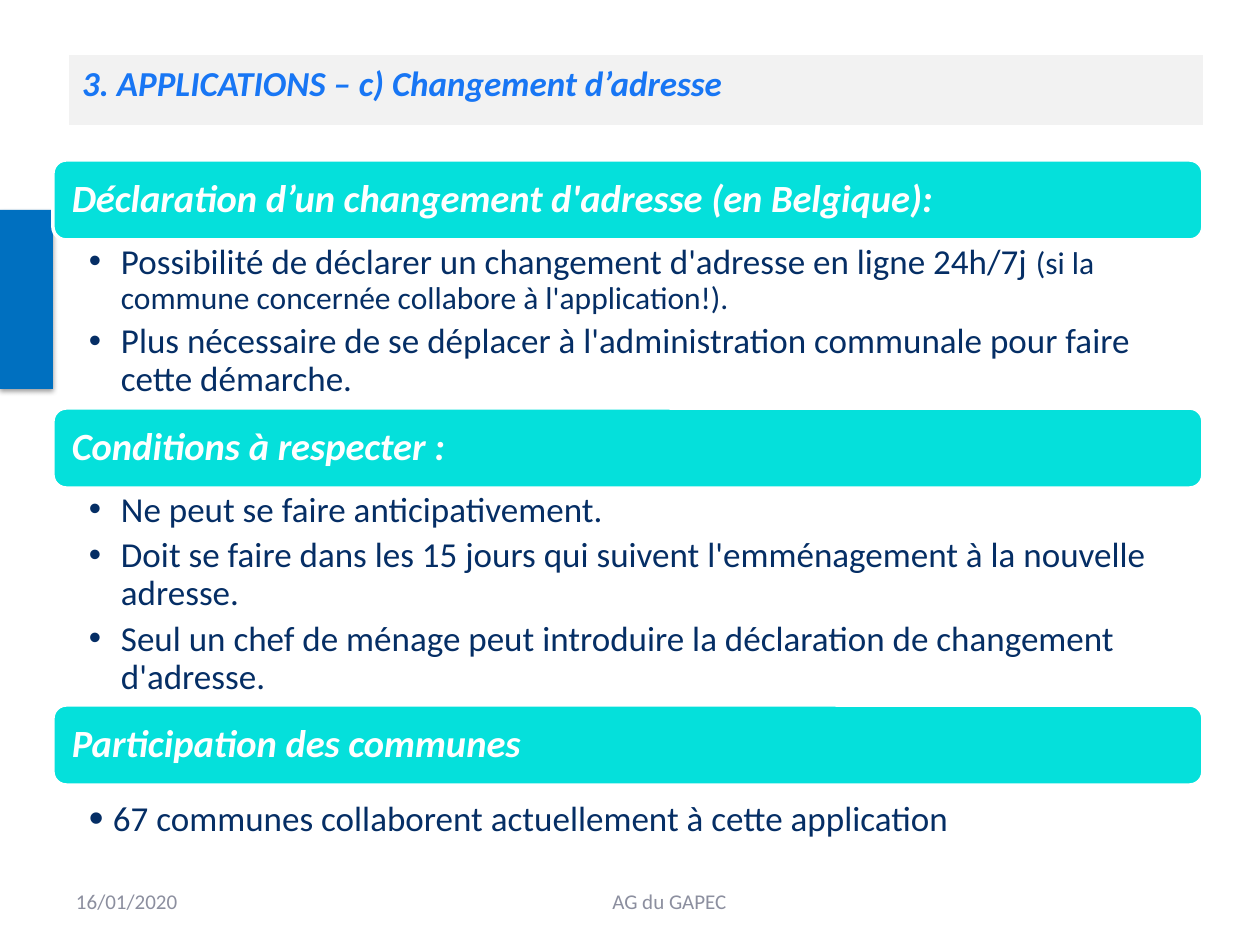
from lxml import etree
from pptx import Presentation
from pptx.dml.color import RGBColor
from pptx.enum.shapes import MSO_SHAPE
from pptx.enum.text import MSO_ANCHOR, MSO_AUTO_SIZE, PP_ALIGN
from pptx.oxml import parse_xml
from pptx.oxml.ns import nsdecls, qn
from pptx.util import Pt

PX = 914400 // 126
TOP, MIDDLE = MSO_ANCHOR.TOP, MSO_ANCHOR.MIDDLE
LEFT, CENTER = PP_ALIGN.LEFT, PP_ALIGN.CENTER
NO_AUTOFIT = MSO_AUTO_SIZE.NONE
RECTANGLE, ROUNDED = MSO_SHAPE.RECTANGLE, MSO_SHAPE.ROUNDED_RECTANGLE

FONT = "Calibri"
WHITE = RGBColor(0xFF, 0xFF, 0xFF)
TURQUOISE = RGBColor(0x05, 0xE0, 0xDB)
NAVY = RGBColor(0x05, 0x2E, 0x65)
BLUE = RGBColor(0x00, 0x70, 0xC0)
TITLE_BLUE = RGBColor(0x18, 0x76, 0xF4)
PALE_GREY = RGBColor(0xF2, 0xF2, 0xF2)
GREY = RGBColor(0x8C, 0x8F, 0x9F)

TITLE = "3. APPLICATIONS – c) Changement d’adresse"
# Each bullet is a list of (text, size) runs.
SECTIONS = [
    {
        "heading": "Déclaration d’un changement d'adresse (en Belgique):",
        "bullets": [
            [("Possibilité de déclarer un changement d'adresse en ligne 24h/7j ", 20),
             ("(si la commune concernée collabore à l'application!).", 18)],
            [("Plus nécessaire de se déplacer à l'administration communale "
              "pour faire cette démarche.", 20)],
        ],
        "height": 168, "indent": 32, "bullet_size": 100, "anchor": TOP,
    },
    {
        "heading": "Conditions à respecter :",
        "bullets": [
            [("Ne peut se faire anticipativement.", 20)],
            [("Doit se faire dans les 15 jours qui suivent l'emménagement "
              "à la nouvelle adresse.", 20)],
            [("Seul un chef de ménage peut introduire la déclaration "
              "de changement d'adresse.", 20)],
        ],
        "height": 217, "indent": 32, "bullet_size": 100, "anchor": TOP,
    },
    {
        "heading": "Participation des communes",
        "bullets": [[("67 communes collaborent actuellement à cette application", 20)]],
        "height": 71, "indent": 24, "bullet_size": 120, "anchor": MIDDLE,
    },
]
FOOTERS = [("16/01/2020", 63, 294, LEFT), ("AG du GAPEC", 372, 595, CENTER)]

SECTION_LEFT, SECTION_TOP, SECTION_WIDTH = 53, 160, 1150
HEADING_HEIGHT = 80


def px(*lengths):
    return [length * PX for length in lengths]


def set_frame(shape, margins, anchor):
    """Wrap the text of a shape; margins are left, top, right, bottom in px."""
    frame = shape.text_frame
    frame.word_wrap = True
    frame.auto_size = NO_AUTOFIT
    frame.vertical_anchor = anchor
    (frame.margin_left, frame.margin_top,
     frame.margin_right, frame.margin_bottom) = px(*margins)
    return frame


def style(para, size, color, emphasis=False, align=LEFT):
    para.alignment = align
    font = para.font
    font.name, font.size = FONT, Pt(size)
    font.bold = font.italic = emphasis
    font.color.rgb = color


def add_filled(slide, kind, box, color):
    shape = slide.shapes.add_shape(kind, *px(*box))
    shape.shadow.inherit = False
    shape.fill.solid()
    shape.fill.fore_color.rgb = color
    shape.line.fill.background()
    return shape


def add_side_bar(slide):
    bar = add_filled(slide, RECTANGLE, (0, 210, 53, 179), BLUE)
    effects = bar._element.spPr.find(qn("a:effectLst"))
    effects.append(parse_xml(
        f'<a:outerShdw {nsdecls("a")} blurRad="{Pt(3.1)}" dist="{Pt(1.6)}" '
        'dir="5400000" rotWithShape="0"><a:srgbClr val="000000">'
        '<a:alpha val="38000"/></a:srgbClr></a:outerShdw>'))


def add_bullet(para, indent, size_percent):
    properties = para._p.get_or_add_pPr()
    properties.set("marL", str(indent * PX))
    properties.set("indent", str(-indent * PX))
    marks = [("a:buSzPct", "val", str(size_percent * 1000)),
             ("a:buFont", "typeface", "Arial"),
             ("a:buChar", "char", "•")]
    # Bullet marks stand before the default run properties.
    defaults = properties.find(qn("a:defRPr"))
    for tag, name, value in marks:
        mark = etree.Element(qn(tag))
        mark.set(name, value)
        defaults.addprevious(mark)


def add_section(slide, section, top):
    """Draw a heading bar with its bullets and return the bottom edge."""
    heading = add_filled(slide, ROUNDED,
                         (SECTION_LEFT, top, SECTION_WIDTH, HEADING_HEIGHT), TURQUOISE)
    heading.line.color.rgb = WHITE
    heading.line.width = Pt(2)
    para = set_frame(heading, (15, 11, 15, 11), MIDDLE).paragraphs[0]
    para.text = section["heading"]
    para.line_spacing = 0.9
    style(para, 22, WHITE, emphasis=True)

    top += HEADING_HEIGHT
    box = slide.shapes.add_textbox(
        *px(SECTION_LEFT, top, SECTION_WIDTH, section["height"]))
    frame = set_frame(box, (36, 4, 20, 4), section["anchor"])
    for index, bullet in enumerate(section["bullets"]):
        para = frame.add_paragraph() if index else frame.paragraphs[0]
        para.line_spacing = 0.9
        para.space_after = Pt(4.5)
        style(para, 20, NAVY)
        add_bullet(para, section["indent"], section["bullet_size"])
        for text, size in bullet:
            span = para.add_run()
            span.text = text
            span.font.size = Pt(size)
    return top + section["height"]


def main():
    deck = Presentation()
    deck.slide_width, deck.slide_height = px(1260, 945)
    slide = deck.slides.add_slide(deck.slide_layouts[5])

    title = slide.shapes.title
    title.left, title.top, title.width, title.height = px(69, 55, 1134, 70)
    title.fill.solid()
    title.fill.fore_color.rgb = PALE_GREY
    para = set_frame(title, (13, 6, 13, 6), TOP).paragraphs[0]
    para.text = TITLE
    style(para, 20, TITLE_BLUE, emphasis=True)

    add_side_bar(slide)
    top = SECTION_TOP
    for section in SECTIONS:
        top = add_section(slide, section, top)

    for text, left, width, align in FOOTERS:
        box = slide.shapes.add_textbox(*px(left, 876, width, 50))
        para = set_frame(box, (13, 6, 13, 6), MIDDLE).paragraphs[0]
        para.text = text
        style(para, 12, GREY, align=align)

    deck.save("out.pptx")


if __name__ == "__main__":
    main()
